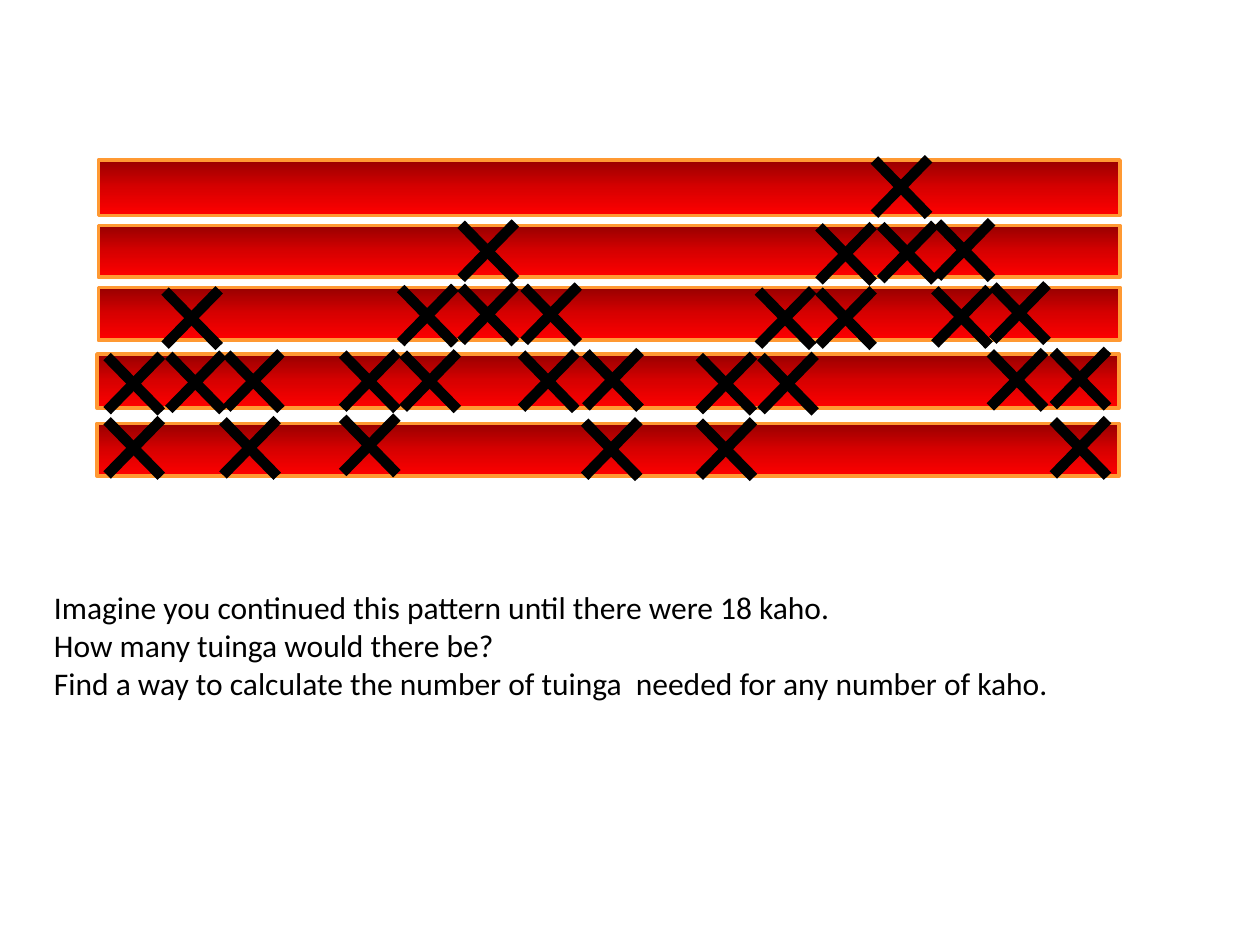
"""Build the kaho and tuinga lashing pattern slide."""
from copy import deepcopy

from pptx import Presentation
from pptx.dml.color import RGBColor
from pptx.enum.shapes import MSO_CONNECTOR as CONN, MSO_SHAPE as SHAPE
from pptx.enum.text import MSO_AUTO_SIZE as AUTO
from pptx.oxml.ns import qn
from pptx.oxml.xmlchemy import OxmlElement
from pptx.util import Pt

PX = 9144
BLACK = RGBColor(0x00, 0x00, 0x00)
ORANGE = RGBColor(0xFF, 0x99, 0x33)
REDS = [RGBColor(0x97, 0, 0), RGBColor(0xD7, 0, 0), RGBColor(0xFF, 0, 0)]
CROSS_W, CROSS_H = 43, 44
BAR_W = 811


def px(*lengths):
    return [n * PX for n in lengths]


def add_text(s, text, box, font="Calibri", size=18, color=BLACK):
    tb = s.shapes.add_textbox(*px(*box))
    tf = tb.text_frame
    tf.word_wrap = True
    tf.auto_size = AUTO.SHAPE_TO_FIT_TEXT
    for i, line in enumerate(text.split("\n")):
        p = tf.add_paragraph() if i else tf.paragraphs[0]
        r = p.add_run()
        r.text = line
        r.font.name = font
        r.font.size = Pt(size)
        r.font.color.rgb = color


prs = Presentation()
prs.slide_width, prs.slide_height = px(1000, 750)
s = prs.slides.add_slide(prs.slide_layouts[6])
pattern = s.shapes.add_group_shape()

kaho = [(78, 127, 44), (78, 179, 41), (78, 228, 42), (77, 281, 43), (77, 336, 42)]
for x, y, h in kaho:
    bar = pattern.shapes.add_shape(SHAPE.RECTANGLE, *px(x, y, BAR_W, h))
    bar.shadow.inherit = False
    bar.line.color.rgb = ORANGE
    bar.line.width = Pt(2)
    bar.fill.gradient()
    bar.fill.gradient_angle = 270
    stops = bar._element.xpath(".//a:gsLst")[0]
    stops.insert(1, deepcopy(stops[0]))
    for i, stop in enumerate(bar.fill.gradient_stops):
        stop.color.rgb = REDS[i]
        stop.position = i / 2

tuinga = [
    (85, 334), (177, 334), (134, 282), (85, 283), (180, 281), (131, 231),
    (272, 332), (416, 228), (366, 178), (272, 281), (320, 281), (318, 229),
    (464, 335), (414, 281), (465, 280), (366, 228),
    (555, 335), (788, 227), (650, 180), (555, 283), (604, 283), (602, 231),
    (836, 334), (786, 280), (836, 279), (650, 231), (744, 177), (742, 230),
    (699, 179), (694, 127),
]
for x, y in tuinga:
    right = x + CROSS_W
    for ends in ((x, y, right, y + CROSS_H), (right, y - 1, x, y + CROSS_H - 1)):
        line = pattern.shapes.add_connector(CONN.STRAIGHT, *px(*ends))
        line.line.color.rgb = BLACK
        line.line.width = Pt(6)
        line._element.find(qn("p:spPr")).append(OxmlElement("a:effectLst"))

add_text(
    s,
    "Imagine you continued this pattern until there were 18 kaho.\n"
    "How many tuinga would there be?\n"
    "Find a way to calculate the number of tuinga  needed for any number of kaho.",
    (33, 462, 945, 101),
)

prs.save("out.pptx")
